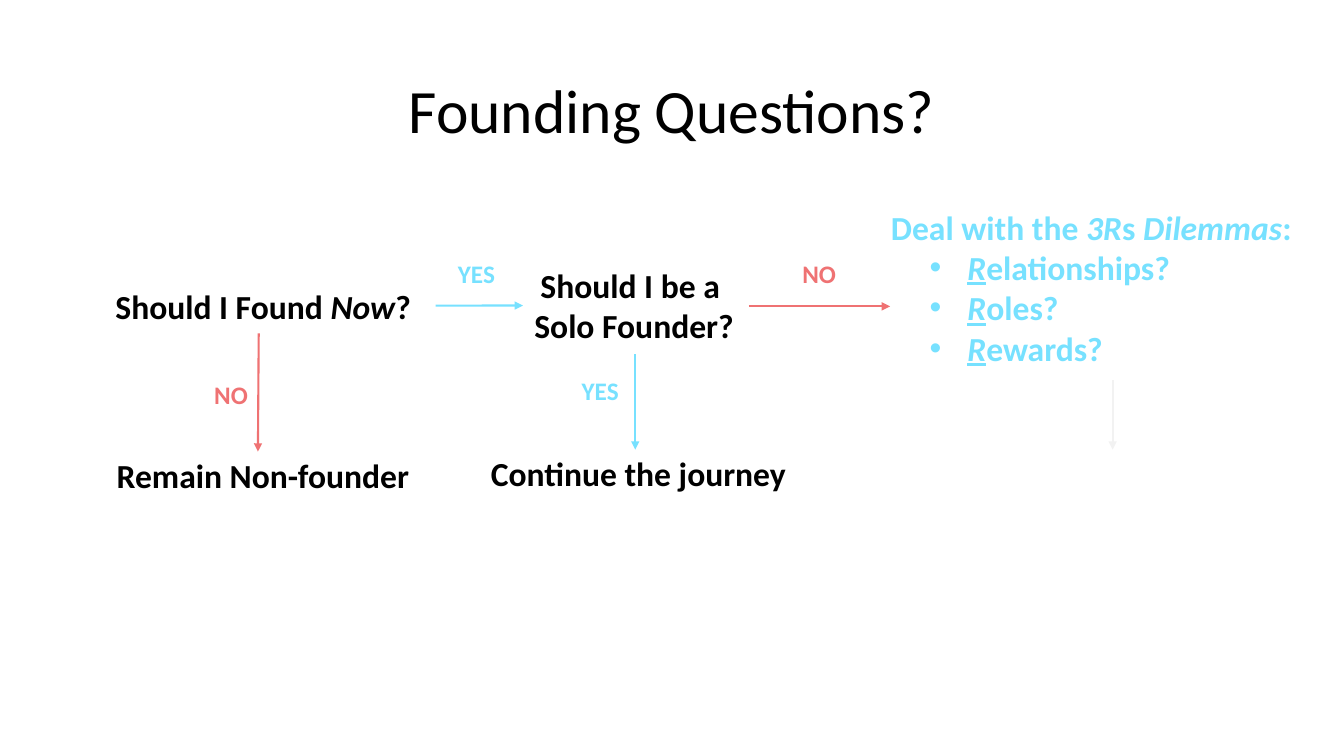
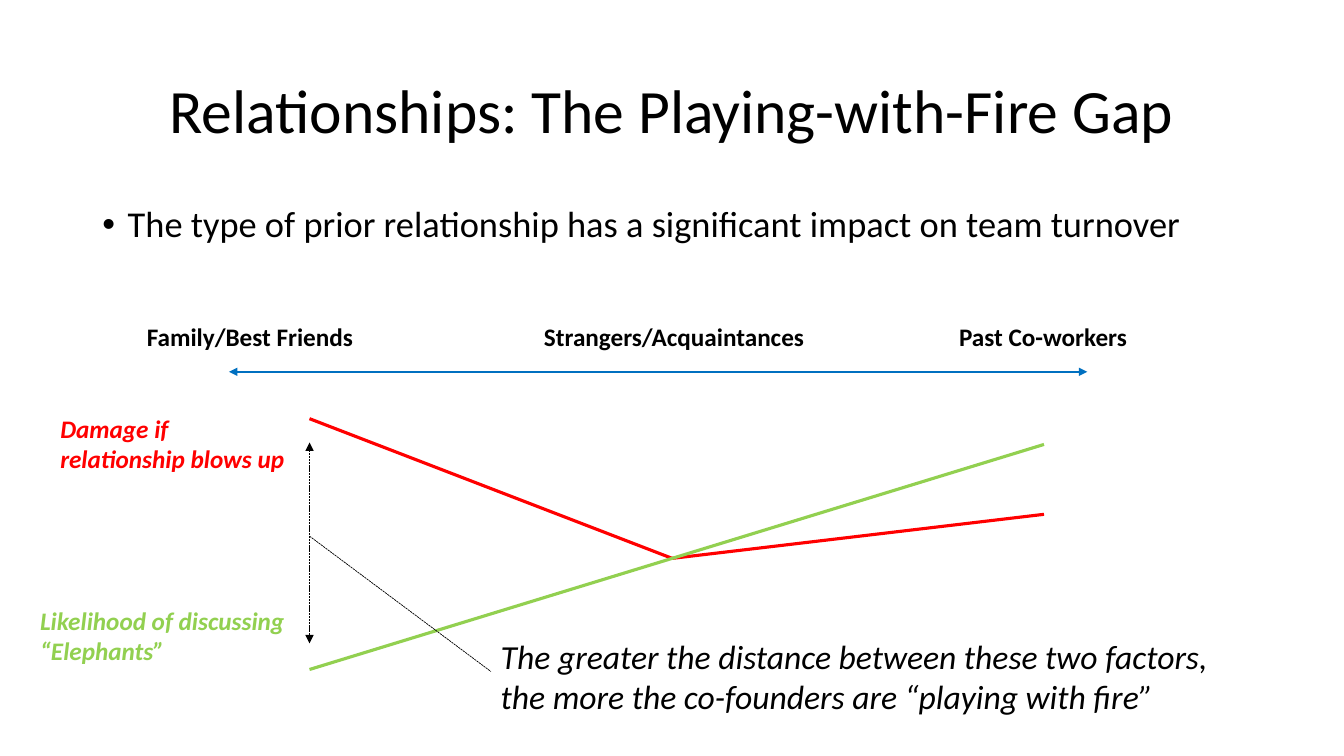
from lxml import etree
from pptx import Presentation
from pptx.dml.color import RGBColor
from pptx.enum.dml import MSO_LINE
from pptx.enum.shapes import MSO_CONNECTOR
from pptx.enum.text import MSO_ANCHOR, PP_ALIGN
from pptx.oxml.ns import qn
from pptx.util import Cm, Pt

BLACK = RGBColor(0x00, 0x00, 0x00)
CORAL = RGBColor(0xEF, 0x72, 0x73)
SKY = RGBColor(0x77, 0xE1, 0xFF)
PALE = RGBColor(0xF2, 0xF2, 0xF2)
BLUE = RGBColor(0x00, 0x70, 0xC0)
RED = RGBColor(0xFF, 0x00, 0x00)
GREEN = RGBColor(0x92, 0xD0, 0x50)

FONT = "Calibri"
LEFT, CENTER = PP_ALIGN.LEFT, PP_ALIGN.CENTER
MIDDLE = MSO_ANCHOR.MIDDLE
STRAIGHT = MSO_CONNECTOR.STRAIGHT
DASH = MSO_LINE.SQUARE_DOT
WEST = 1


class Deck:
    def __init__(self):
        self.prs = Presentation()
        self.prs.slide_width = Cm(33.87)
        self.prs.slide_height = Cm(19.05)
        self.slide = None

    def start(self, title):
        """Add a slide with its title."""
        self.slide = self.prs.slides.add_slide(self.prs.slide_layouts[6])
        box = self.text((2.33, 1.02, 29.21, 3.68), title, size=44, bold=False,
                        align=CENTER, wrap=True)
        box.text_frame.vertical_anchor = MIDDLE
        box.text_frame.paragraphs[0].line_spacing = 0.9

    def text(self, area, *lines, size=24, color=BLACK, bold=True,
             italic=False, align=LEFT, wrap=False):
        """Add a text box; words between asterisks are italic."""
        box = self.slide.shapes.add_textbox(*map(Cm, area))
        frame = box.text_frame
        frame.word_wrap = wrap
        for i, line in enumerate(lines):
            para = frame.add_paragraph() if i else frame.paragraphs[0]
            para.alignment = align
            parts = line.split("*")
            para.text = parts[0]
            for part in parts[1:]:
                para.add_run().text = part
            # An empty first part leaves no run, so count from the end.
            skip = len(parts) - len(para.runs) if len(parts) > 1 else 0
            for j, run in enumerate(para.runs, skip):
                font = run.font
                font.name, font.size, font.bold = FONT, Pt(size), bold
                font.italic = italic or (len(parts) > 1 and j % 2 == 1)
                font.color.rgb = color
        return box

    def label(self, left, top, width, text, color=BLACK):
        self.text((left, top, width, 1.02), text, size=18, color=color)

    def bullet(self, para, indent, hang):
        props = para._p.get_or_add_pPr()
        props.set("marL", str(Cm(indent)))
        props.set("indent", str(-Cm(hang)))
        etree.SubElement(props, qn("a:buFont")).set("typeface", "Arial")
        etree.SubElement(props, qn("a:buChar")).set("char", "•")

    def line(self, start, end, color, width=1.5, ends=(), dash=None):
        """Draw a line; ends names the ends that get an arrowhead."""
        link = self.slide.shapes.add_connector(
            STRAIGHT, *map(Cm, (*start, *end)))
        link.line.color.rgb = color
        link.line.width = Pt(width)
        if dash:
            link.line.dash_style = dash
        props = link._element.spPr
        for name in ends:
            tip = etree.SubElement(props.find(qn("a:ln")), qn(f"a:{name}End"))
            tip.set("type", "triangle")
        etree.SubElement(props, qn("a:effectLst"))
        return link

    def arrow(self, start, end, color):
        return self.line(start, end, color, ends=("tail",))


def questions(deck):
    deck.start("Founding Questions?")
    deck.text((2.66, 7.09, 8.03, 1.27), "Should I Found *Now*?")
    deck.text((2.69, 11.33, 7.95, 1.27), "Remain Non-founder")
    solo = deck.text((13.18, 6.55, 5.6, 2.3),
                     "Should I be a \nSolo Founder?", align=CENTER)
    deck.text((12.12, 11.3, 8.03, 1.27), "Continue the journey")

    deal = deck.text((21.91, 5.08, 11.18, 4.37),
                     "Deal with the *3R*s *Dilemmas*:", "*R*elationships?",
                     "*R*oles?", "*R*ewards?", color=SKY, wrap=True)
    head, *items = deal.text_frame.paragraphs
    head.alignment = CENTER
    for para in items:
        para.level = 1
        deck.bullet(para, 2.22, 0.95)
        para.runs[0].font.underline = True

    deck.arrow((6.52, 8.4), (6.5, 11.38), CORAL)
    deck.arrow((18.87, 7.72), (22.43, 7.72), CORAL)
    deck.arrow((10.98, 7.7), (13.18, 7.7), SKY).end_connect(solo, WEST)
    deck.arrow((16.01, 8.93), (16.01, 11.33), SKY)
    deck.arrow((28.04, 9.58), (28.04, 11.33), PALE)

    for left, top in ((11.29, 6.38), (14.41, 9.33)):
        deck.label(left, top, 1.45, "YES", SKY)
    for left, top in ((5.15, 9.43), (19.97, 6.38)):
        deck.label(left, top, 1.37, "NO", CORAL)


def gap(deck):
    deck.start("Relationships: The Playing-with-Fire Gap")
    body = deck.text(
        (2.33, 5.08, 30.18, 13.28),
        "The type of prior relationship has a significant impact on team turnover",
        size=26, bold=False, wrap=True)
    para = body.text_frame.paragraphs[0]
    para.line_spacing = 0.9
    para.space_before = Pt(10)
    deck.bullet(para, 0.64, 0.64)

    both = ("head", "tail")
    deck.line((5.77, 9.37), (27.4, 9.37), BLUE, ends=both)
    for left, width, name in ((3.45, 5.74, "Family/Best Friends"),
                              (13.46, 7.11, "Strangers/Acquaintances"),
                              (23.92, 4.78, "Past Co-workers")):
        deck.label(left, 7.97, width, name)

    near, cross, far = 7.8, (16.94, 14.07), 26.31
    deck.line((near, 10.55), cross, RED, 2.25)
    deck.line(cross, (far, 12.96), RED, 2.25)
    deck.line((near, 16.87), (far, 11.2), GREEN, 2.25)
    deck.text((1.27, 10.29, 6.22, 1.8), "Damage if \nrelationship blows up",
              size=18, color=RED, italic=True)
    deck.text((0.76, 15.12, 6.73, 1.8), "Likelihood of discussing",
              "“Elephants”", size=18, color=GREEN, italic=True)

    deck.text(
        (12.37, 15.9, 18.72, 2.31),
        "The greater the distance between these two factors, \n"
        "the more the co-founders are “playing with fire”",
        bold=False, italic=True)
    deck.line((near, 11.15), (near, 16.21), BLACK, 0.5, both, DASH)
    deck.line((near, 13.51), (12.37, 16.92), BLACK, 0.5, dash=DASH)


def main():
    deck = Deck()
    questions(deck)
    gap(deck)
    deck.prs.save("out.pptx")


if __name__ == "__main__":
    main()
